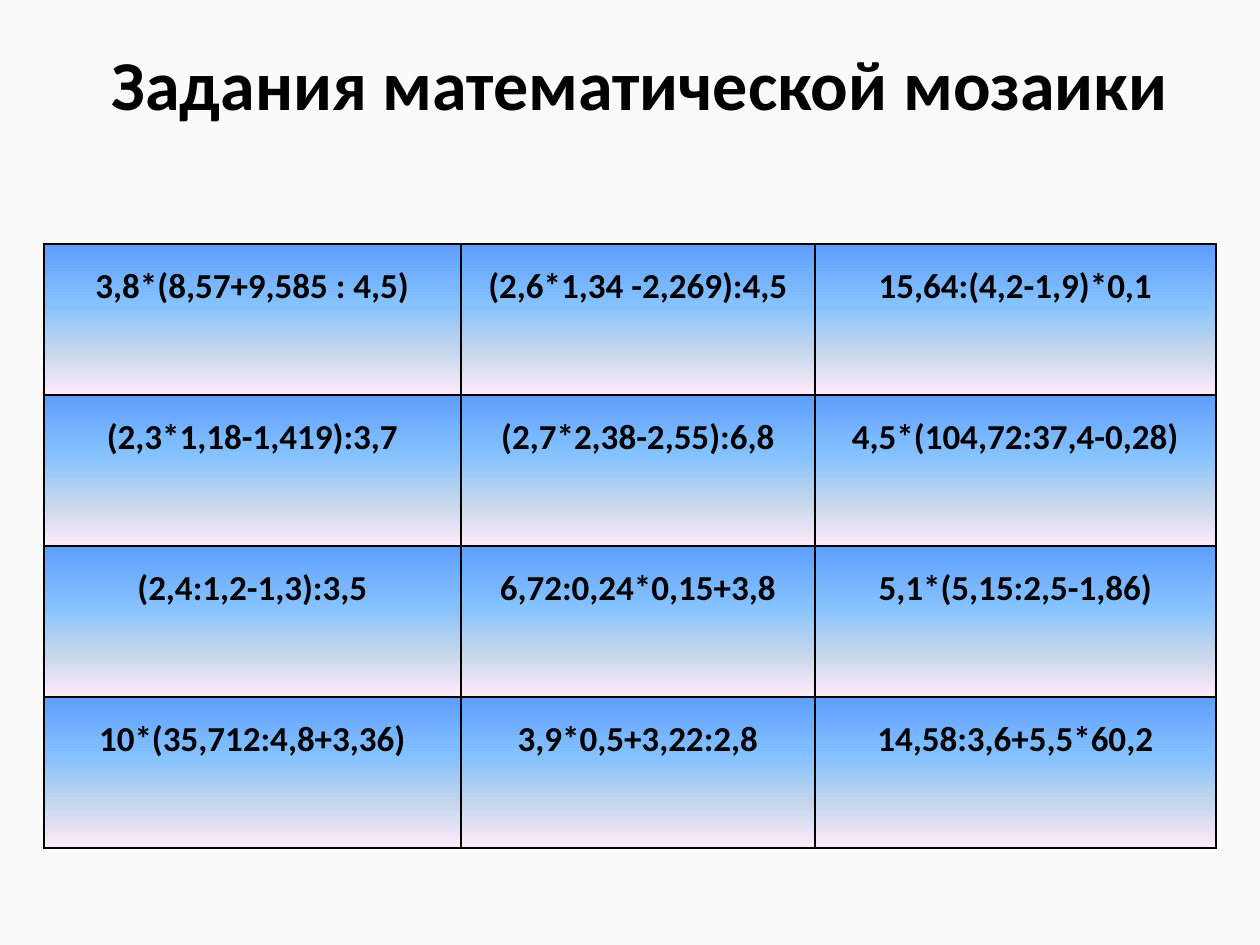
from typing import NamedTuple

from lxml.etree import SubElement
from pptx import Presentation
from pptx.dml.color import RGBColor
from pptx.enum.text import MSO_ANCHOR as Anchor, PP_ALIGN as Align
from pptx.oxml.ns import qn
from pptx.util import Emu, Pt

PX = 914400 / 126
FONT = "Calibri"
COLORS = {
    "page": "FAFAFA",
    "ink": "000000",
    "blue": "5E9EFF",
    "sky": "85C2FF",
    "mist": "C4D6EB",
    "pink": "FFEBFA",
}
COLUMN_WIDTHS = (417, 354, 401)
ROW_HEIGHT = 151
TASKS = (
    ("3,8*(8,57+9,585 : 4,5)", "(2,6*1,34 -2,269):4,5", "15,64:(4,2-1,9)*0,1"),
    ("(2,3*1,18-1,419):3,7", "(2,7*2,38-2,55):6,8", "4,5*(104,72:37,4-0,28)"),
    ("(2,4:1,2-1,3):3,5", "6,72:0,24*0,15+3,8", "5,1*(5,15:2,5-1,86)"),
    ("10*(35,712:4,8+3,36)", "3,9*0,5+3,22:2,8", "14,58:3,6+5,5*60,2"),
)


class Stop(NamedTuple):
    percent: int
    color: str


class Area(NamedTuple):
    left: int
    top: int
    width: int
    height: int


GRADIENT = (Stop(0, "blue"), Stop(40, "sky"), Stop(70, "mist"), Stop(100, "pink"))


def px(length: int) -> Emu:
    """Turn pixels into EMU."""
    return Emu(round(length * PX))


def write(frame, text: str, *, size: int, align: Align, spacing: float) -> None:
    """Write one bold paragraph into a text frame."""
    frame.word_wrap = True
    para = frame.paragraphs[0]
    para.alignment = align
    para.line_spacing = spacing
    span = para.add_run()
    span.text = text
    span.font.name = FONT
    span.font.size = Pt(size)
    span.font.bold = True
    span.font.color.rgb = RGBColor.from_string(COLORS["ink"])


def add_color(parent, color: str) -> None:
    """Add a named colour to an XML element."""
    SubElement(parent, qn("a:srgbClr"), val=COLORS[color])


def style_cell(cell) -> None:
    """Give a cell thin borders and a top-to-bottom gradient."""
    cell.margin_left = cell.margin_right = px(9)
    cell.margin_top = cell.margin_bottom = 0
    cell.vertical_anchor = Anchor.TOP
    properties = cell._tc.get_or_add_tcPr()
    for side in ("lnL", "lnR", "lnT", "lnB"):
        border = SubElement(properties, qn(f"a:{side}"), w=str(Pt(1)))
        add_color(SubElement(border, qn("a:solidFill")), "ink")
    fill = SubElement(properties, qn("a:gradFill"), rotWithShape="1")
    stops = SubElement(fill, qn("a:gsLst"))
    for stop in GRADIENT:
        add_color(SubElement(stops, qn("a:gs"), pos=str(stop.percent * 1000)), stop.color)
    SubElement(fill, qn("a:lin"), ang=str(90 * 60000), scaled="0")


def add_title(page, text: str, area: Area) -> None:
    """Add the right-aligned heading."""
    box = page.shapes.add_textbox(*map(px, area))
    box.text_frame.vertical_anchor = Anchor.MIDDLE
    write(box.text_frame, text, size=40, align=Align.RIGHT, spacing=0.9)


def add_tasks(page, left: int, top: int) -> None:
    """Add the table of tasks."""
    area = Area(left, top, sum(COLUMN_WIDTHS), ROW_HEIGHT * len(TASKS))
    table = page.shapes.add_table(len(TASKS), len(COLUMN_WIDTHS), *map(px, area)).table
    table.first_row = table.horz_banding = False
    for column, width in zip(table.columns, COLUMN_WIDTHS):
        column.width = px(width)
    for row, tasks in zip(table.rows, TASKS):
        row.height = px(ROW_HEIGHT)
        for cell, task in zip(row.cells, tasks):
            style_cell(cell)
            write(cell.text_frame, task, size=20, align=Align.CENTER, spacing=1.5)


def main() -> None:
    """Build and save the deck."""
    deck = Presentation()
    deck.slide_width, deck.slide_height = px(1260), px(945)
    page = deck.slides.add_slide(deck.slide_layouts[6])
    page.background.fill.solid()
    page.background.fill.fore_color.rgb = RGBColor.from_string(COLORS["page"])
    add_title(page, "Задания математической мозаики", Area(94, -4, 1086, 183))
    add_tasks(page, 44, 244)
    deck.save("out.pptx")


if __name__ == "__main__":
    main()
